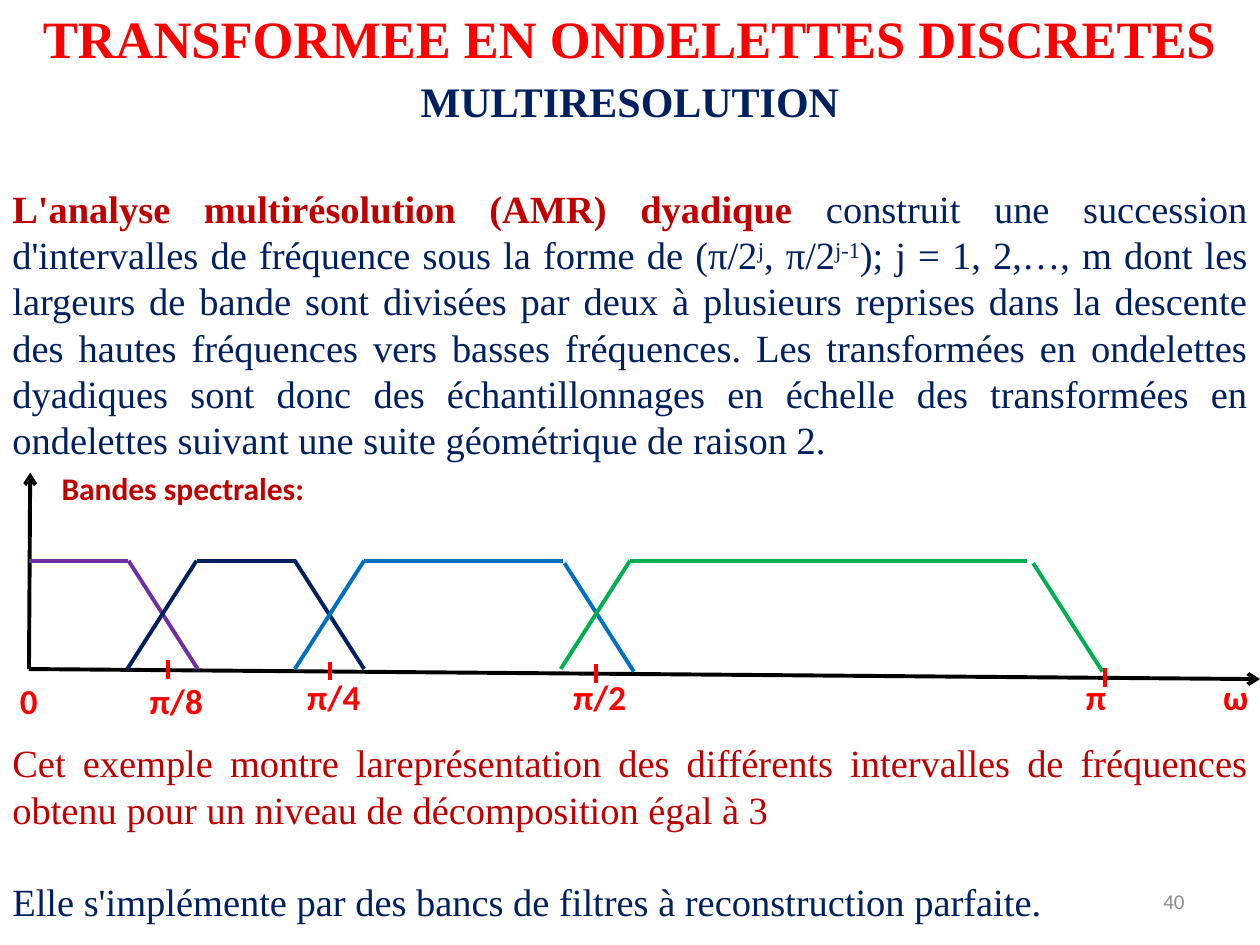
from lxml.etree import SubElement
from pptx import Presentation
from pptx.dml.color import RGBColor
from pptx.enum.shapes import MSO_CONNECTOR
from pptx.enum.text import MSO_ANCHOR, PP_ALIGN
from pptx.oxml.ns import qn
from pptx.util import Inches, Pt

COLORS = {
    "red": "FF0000", "dark_red": "C00000", "navy": "002060", "blue": "0070C0",
    "green": "00B050", "purple": "7030A0", "black": "000000", "gray": "8C8C8C",
}
SERIF, SANS = "Times New Roman", "Calibri"


class SlideBuilder:
    line_width = Pt(2.25)

    def __init__(self, slide):
        self.slide = slide

    def text_box(self, left, top, width, height, anchor=MSO_ANCHOR.TOP):
        shape = self.slide.shapes.add_textbox(
            Inches(left), Inches(top), Inches(width), Inches(height))
        shape.text_frame.word_wrap = True
        shape.text_frame.vertical_anchor = anchor
        return shape.text_frame

    def run(self, paragraph, text, size, color, font, bold=False, raised=False):
        run = paragraph.add_run()
        run.text = text
        run.font.size = Pt(size)
        run.font.name = font
        run.font.bold = bold
        run.font.color.rgb = RGBColor.from_string(COLORS[color])
        if raised:
            run.font._element.set("baseline", "30000")

    def label(self, text, box, size, color, font=SANS, bold=True,
              align=PP_ALIGN.LEFT, anchor=MSO_ANCHOR.TOP):
        paragraph = self.text_box(*box, anchor=anchor).paragraphs[0]
        paragraph.alignment = align
        self.run(paragraph, text, size, color, font, bold)

    def line(self, start, end, color, arrow=False):
        connector = self.slide.shapes.add_connector(
            MSO_CONNECTOR.STRAIGHT, *(Inches(value) for value in (*start, *end)))
        connector.line.width = self.line_width
        connector.line.color.rgb = RGBColor.from_string(COLORS[color])
        if arrow:
            SubElement(connector.line._get_or_add_ln(), qn("a:tailEnd"), type="arrow")
        SubElement(connector._element.spPr, qn("a:effectLst"))


presentation = Presentation()
presentation.slide_width, presentation.slide_height = Inches(10), Inches(7.5)
slide = presentation.slides.add_slide(presentation.slide_layouts[6])
builder = SlideBuilder(slide)

# Slide number
builder.label("40", (7.17, 6.95, 2.33, 0.4), 12, "gray", bold=False,
              align=PP_ALIGN.RIGHT, anchor=MSO_ANCHOR.MIDDLE)

# Body: space before each paragraph (points), then its runs
LINE_HEIGHT = 26.4
body_paragraphs = [
    (0, [
        ("L'analyse multirésolution (AMR) dyadique ", "dark_red", True, False),
        ("construit une succession d'intervalles de fréquence sous la forme de (π/2",
         "navy", False, False),
        ("j", "navy", False, True),
        (", π/2", "navy", False, False),
        ("j-1", "navy", False, True),
        ("); j = 1, 2,…, m dont les largeurs de bande sont divisées par deux à "
         "plusieurs reprises dans la descente des hautes fréquences vers basses "
         "fréquences. Les transformées en ondelettes dyadiques sont donc des "
         "échantillonnages en échelle des transformées en ondelettes suivant une "
         "suite géométrique de raison 2. ", "navy", False, False),
    ]),
    (6 * LINE_HEIGHT, [
        ("Cet exemple montre lareprésentation des différents intervalles de "
         "fréquences obtenu pour un niveau de décomposition égal à 3",
         "dark_red", False, False),
    ]),
    (LINE_HEIGHT, [
        ("Elle s'implémente par des bancs de filtres à reconstruction parfaite.",
         "navy", False, False),
    ]),
]
body = builder.text_box(0, 1.42, 10, 6.02)
for index, (space_before, runs) in enumerate(body_paragraphs):
    paragraph = body.add_paragraph() if index else body.paragraphs[0]
    paragraph.alignment = PP_ALIGN.JUSTIFY
    paragraph.line_spacing = Pt(LINE_HEIGHT)
    paragraph.space_before = Pt(space_before)
    for text, color, bold, raised in runs:
        builder.run(paragraph, text, 22, color, SERIF, bold, raised)

# Title
builder.label("TRANSFORMEE EN ONDELETTES DISCRETES", (0, 0, 10, 0.61), 30, "red",
              SERIF, align=PP_ALIGN.CENTER)

# Axes
origin = (0.23, 5.31)
builder.line(origin, (10, 5.39), "black", arrow=True)
builder.line(origin, (0.24, 3.75), "black", arrow=True)

# Spectral bands: colour, plateau start and end, start of the falling edge
PLATEAU, EDGE_WIDTH, EDGE_HEIGHT = 4.45, 0.55, 0.86
bands = [
    ("purple", 0.23, 1.02, (1.02, 4.45)),
    ("navy", 1.56, 2.35, (2.34, 4.45)),
    ("blue", 2.89, 4.47, (4.48, 4.47)),
    ("green", 5, 8.15, (8.2, 4.47)),
]
for color, start, end, (fall_x, fall_y) in bands:
    if start > origin[0]:
        builder.line((start - EDGE_WIDTH, PLATEAU + EDGE_HEIGHT), (start, PLATEAU), color)
    builder.line((start, PLATEAU), (end, PLATEAU), color)
    builder.line((fall_x, fall_y), (fall_x + EDGE_WIDTH, fall_y + EDGE_HEIGHT), color)

# Frequency ticks
for x, y in [(1.33, 5.24), (2.62, 5.25), (4.73, 5.27), (8.77, 5.3)]:
    builder.line((x, y), (x, y + 0.15), "red")

# Axis labels
for text, left, top, width in [
    ("0", 0.06, 5.34, 0.55), ("π/8", 1.09, 5.34, 0.7), ("π/4", 2.34, 5.31, 0.7),
    ("π/2", 4.45, 5.31, 0.7), ("π", 8.52, 5.31, 0.47), ("ω", 9.61, 5.31, 0.47),
]:
    builder.label(text, (left, top, width, 0.44), 20, "red")

# Headings
builder.label("Bandes spectrales:", (0.39, 3.67, 9.3, 0.4), 18, "dark_red")
builder.label("MULTIRESOLUTION", (0, 0.55, 10, 0.5), 24, "navy", SERIF,
              align=PP_ALIGN.CENTER)

presentation.save("out.pptx")
